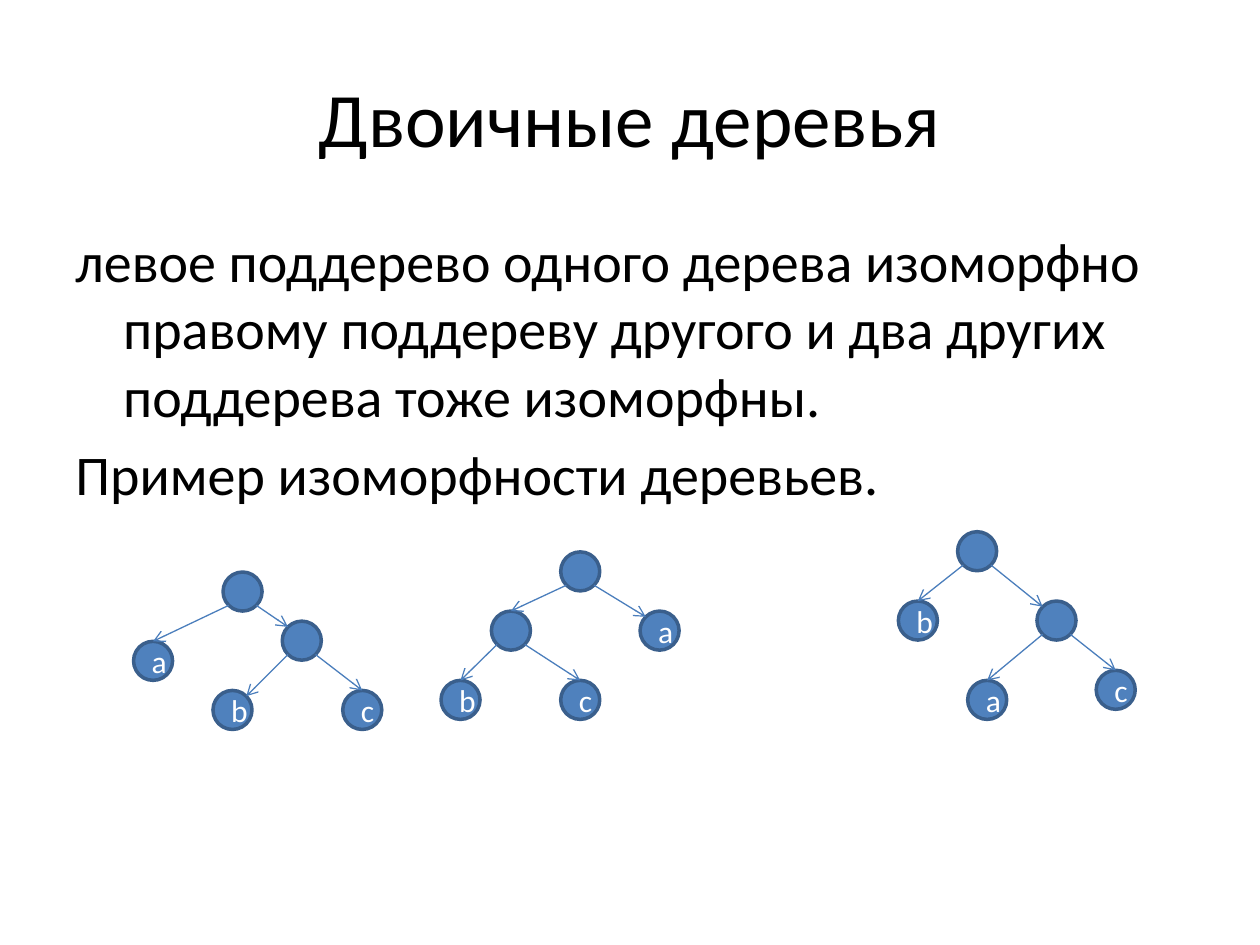
import math

import pptx
import pptx.dml.color
import pptx.enum.shapes
import pptx.enum.text
import pptx.oxml
import pptx.oxml.ns
import pptx.util

Inches, Pt = pptx.util.Inches, pptx.util.Pt
FONT = "Calibri"
COLORS = {"text": "000000", "node": "4F81BD", "outline": "3A5F8C",
          "label": "FFFFFF", "edge": "4B7EBC"}
TITLE = "Двоичные деревья"
BODY = [
    "левое поддерево одного дерева изоморфно правому поддереву другого "
    "и два других поддерева тоже изоморфны.",
    "Пример изоморфности деревьев.",
]
NODE_SIZE = 0.31
# Nodes: name -> (left, top, label). Edges: (parent, child, side of parent, side of child).
TREES = [
    {"nodes": {"root": (1.77, 4.54, ""), "inner": (2.24, 4.93, ""),
               "a": (1.06, 5.09, "a"), "b": (1.69, 5.48, "b"), "c": (2.72, 5.48, "c")},
     "edges": [("root", "a", "bottom left", "top"),
               ("root", "inner", "bottom right", "top left"),
               ("inner", "c", "bottom right", "top"),
               ("inner", "b", "bottom left", "top right")]},
    {"nodes": {"root": (4.45, 4.38, ""), "inner": (3.9, 4.85, ""),
               "a": (5.08, 4.85, "a"), "b": (3.5, 5.4, "b"), "c": (4.45, 5.4, "c")},
     "edges": [("root", "inner", "bottom left", "top"),
               ("inner", "b", "bottom left", "top"),
               ("inner", "c", "bottom right", "top"),
               ("root", "a", "bottom right", "top left")]},
    {"nodes": {"root": (7.6, 4.22, ""), "inner": (8.23, 4.77, ""),
               "a": (7.68, 5.4, "a"), "b": (7.13, 4.77, "b"), "c": (8.7, 5.32, "c")},
     "edges": [("root", "b", "bottom left", "top"),
               ("root", "inner", "bottom right", "top left"),
               ("inner", "a", "bottom left", "top"),
               ("inner", "c", "bottom right", "top")]},
]
ANGLES = {"top": 270, "top left": 225, "top right": 315,
          "bottom left": 135, "bottom right": 45}


def color(name):
    return pptx.dml.color.RGBColor.from_string(COLORS[name])


def style_runs(para, size, color_name):
    for span in para.runs:
        span.font.name = FONT
        span.font.size = Pt(size)
        span.font.color.rgb = color(color_name)


def add_text(page, place, lines, size):
    box = page.shapes.add_textbox(*map(Inches, place))
    frame = box.text_frame
    frame.word_wrap = True
    frame.text = "\n".join(lines)
    for para in frame.paragraphs:
        style_runs(para, size, "text")
    return frame


def add_node(page, left, top, label):
    node = page.shapes.add_shape(
        pptx.enum.shapes.MSO_SHAPE.OVAL,
        *map(Inches, (left, top, NODE_SIZE, NODE_SIZE)))
    node.shadow.inherit = False
    node.fill.solid()
    node.fill.fore_color.rgb = color("node")
    node.line.color.rgb = color("outline")
    node.line.width = Pt(2)
    if label:
        node.text_frame.text = label
        para = node.text_frame.paragraphs[0]
        para.alignment = pptx.enum.text.PP_ALIGN.CENTER
        style_runs(para, 18, "label")


def rim_point(node, side):
    """Point on the node's circle at the named side."""
    left, top, _ = node
    radius, angle = NODE_SIZE / 2, math.radians(ANGLES[side])
    return (Inches(left + radius * (1 + math.cos(angle))),
            Inches(top + radius * (1 + math.sin(angle))))


def add_edge(page, start, end):
    edge = page.shapes.add_connector(
        pptx.enum.shapes.MSO_CONNECTOR.STRAIGHT, *start, *end)
    edge.line.color.rgb = color("edge")
    edge.line.width = Pt(0.75)
    namespace = pptx.oxml.ns.nsdecls("a")
    edge.line._get_or_add_ln().append(
        pptx.oxml.parse_xml(f'<a:tailEnd {namespace} type="arrow"/>'))
    edge._element.spPr.append(pptx.oxml.parse_xml(f"<a:effectLst {namespace}/>"))


def main():
    deck = pptx.Presentation()
    deck.slide_width, deck.slide_height = Inches(10), Inches(7.5)
    page = deck.slides.add_slide(deck.slide_layouts[6])

    title = add_text(page, (0.5, 0.3, 9, 1.25), [TITLE], 44)
    title.vertical_anchor = pptx.enum.text.MSO_ANCHOR.MIDDLE
    title.paragraphs[0].alignment = pptx.enum.text.PP_ALIGN.CENTER

    body = add_text(page, (0.5, 1.75, 9, 4.95), BODY, 32)
    for para in body.paragraphs:
        para.space_before = Pt(6.4)
        indent = para._p.get_or_add_pPr()
        indent.set("marL", str(Inches(0.38)))
        indent.set("indent", str(-Inches(0.38)))

    for tree in TREES:
        nodes = tree["nodes"]
        for node in nodes.values():
            add_node(page, *node)
        for parent, child, start, end in tree["edges"]:
            add_edge(page, rim_point(nodes[parent], start), rim_point(nodes[child], end))

    deck.save("out.pptx")


if __name__ == "__main__":
    main()
